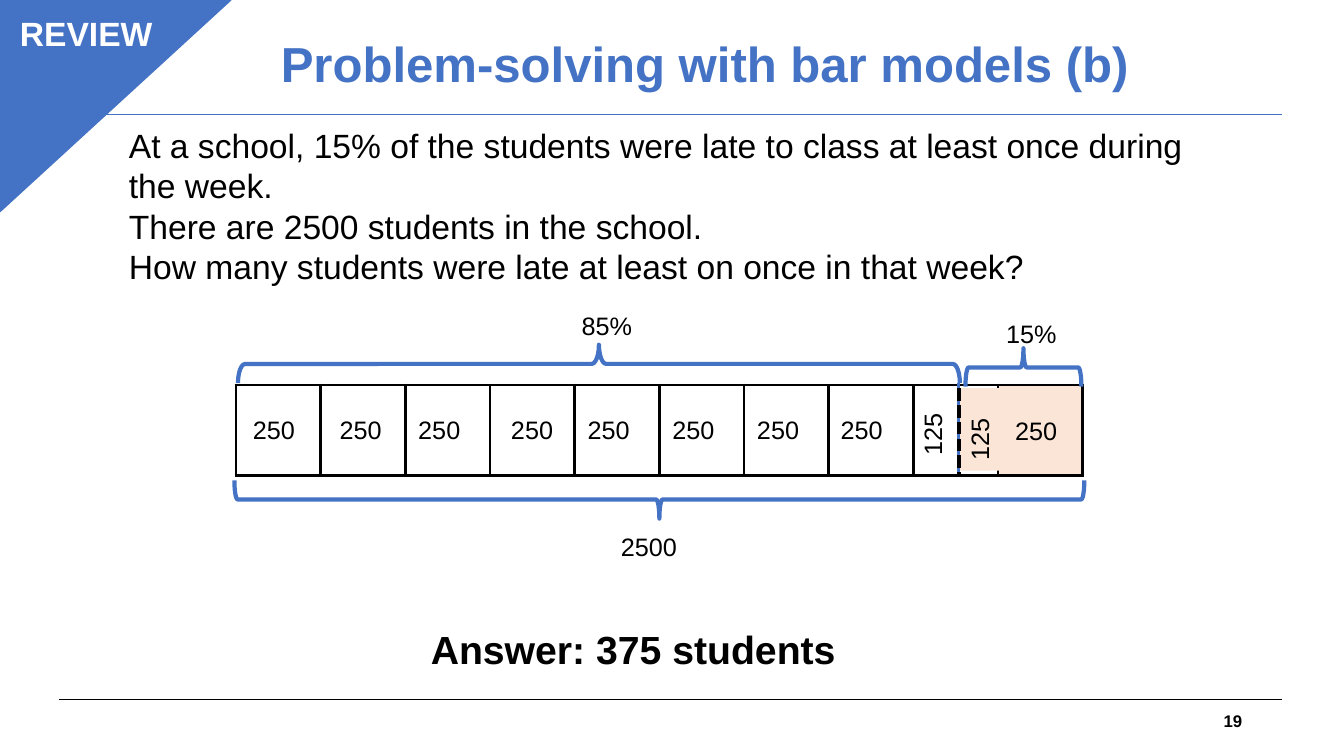
from dataclasses import dataclass
from typing import Optional

from lxml import etree
from pptx import Presentation
from pptx import util as u
from pptx.dml.color import RGBColor
from pptx.enum import dml, shapes, text
from pptx.oxml import parse_xml
from pptx.oxml.ns import nsdecls, qn

PX = 9144  # 100 px to the inch

BLUE = RGBColor(0x44, 0x72, 0xC4)
PEACH = RGBColor(0xFB, 0xE5, 0xD6)
BLACK = RGBColor(0, 0, 0)
WHITE = RGBColor(255, 255, 255)

LEFT, CENTER, RIGHT = text.PP_ALIGN.LEFT, text.PP_ALIGN.CENTER, text.PP_ALIGN.RIGHT
TOP, MIDDLE = text.MSO_ANCHOR.TOP, text.MSO_ANCHOR.MIDDLE


@dataclass
class Label:
    lines: list[str]
    x: int
    y: int
    w: int = 93
    h: int = 40
    size: float = 18
    color: RGBColor = BLACK
    bold: bool = False
    align: int = LEFT
    anchor: int = TOP
    fill: Optional[RGBColor] = None
    rotation: int = 0
    grow: bool = True
    spacing: Optional[float] = None


@dataclass
class Brace:
    x: int
    y: int
    w: int
    h: int
    rotation: int
    curl: float = 0.0833


@dataclass
class Rule:
    x1: int
    y1: int
    x2: int
    y2: int
    color: RGBColor
    width: float = 0.75
    dash: Optional[int] = None


def px(*lengths: int) -> list[int]:
    return [u.Emu(n * PX) for n in lengths]


def add_label(s, label: Label) -> None:
    sp = s.shapes.add_textbox(*px(label.x, label.y, label.w, label.h))
    sp.rotation = label.rotation
    if label.fill is not None:
        sp.fill.solid()
        sp.fill.fore_color.rgb = label.fill
    tf = sp.text_frame
    fit = text.MSO_AUTO_SIZE.SHAPE_TO_FIT_TEXT if label.grow else text.MSO_AUTO_SIZE.NONE
    frame_format = {"word_wrap": True, "auto_size": fit, "vertical_anchor": label.anchor}
    for name, value in frame_format.items():
        setattr(tf, name, value)
    for i, line in enumerate(label.lines):
        p = tf.add_paragraph() if i else tf.paragraphs[0]
        p.alignment = label.align
        p.line_spacing = label.spacing
        r = p.add_run()
        r.text = line
        font_format = {"name": "Arial", "size": u.Pt(label.size), "bold": label.bold}
        for name, value in font_format.items():
            setattr(r.font, name, value)
        r.font.color.rgb = label.color


def add_brace(s, brace: Brace) -> None:
    sp = s.shapes.add_shape(shapes.MSO_SHAPE.LEFT_BRACE,
                            *px(brace.x, brace.y, brace.w, brace.h))
    sp.shadow.inherit = False
    sp.rotation = brace.rotation
    sp.adjustments[0] = brace.curl
    sp.fill.background()
    sp.line.color.rgb = BLUE
    sp.line.width = u.Pt(3)


def add_rule(s, rule: Rule) -> None:
    line = s.shapes.add_connector(shapes.MSO_CONNECTOR.STRAIGHT,
                                  *px(rule.x1, rule.y1, rule.x2, rule.y2))
    line.line.color.rgb = rule.color
    line.line.width = u.Pt(rule.width)
    if rule.dash is not None:
        line.line.dash_style = rule.dash
    etree.SubElement(line._element.spPr, qn("a:effectLst"))


def add_bar(s, x: int, y: int, cell_w: int, h: int, count: int) -> None:
    table = s.shapes.add_table(1, count, *px(x, y, cell_w * count, h)).table
    table.first_row = table.horz_banding = False
    table.rows[0].height = u.Emu(h * PX)
    for i, cell in enumerate(table.rows[0].cells):
        table.columns[i].width = u.Emu(cell_w * PX)
        if i == count - 1:
            cell.fill.solid()
            cell.fill.fore_color.rgb = PEACH
        else:
            cell.fill.background()
        tc_pr = cell._tc.get_or_add_tcPr()
        for k, side in enumerate("LRTB"):
            tc_pr.insert(k, parse_xml(
                f'<a:ln{side} {nsdecls("a")} w="{u.Pt(2.25)}"><a:solidFill>'
                f'<a:srgbClr val="{BLACK}"/></a:solidFill></a:ln{side}>'))


def add_corner(s, w: int, h: int) -> None:
    sp = s.shapes.add_shape(shapes.MSO_SHAPE.ISOSCELES_TRIANGLE, *px(0, 0, w, h))
    sp.shadow.inherit = False
    sp.adjustments[0] = 0
    sp._element.spPr.xfrm.set("flipV", "1")
    sp.fill.solid()
    sp.fill.fore_color.rgb = BLUE
    sp.line.color.rgb = BLUE
    sp.line.width = u.Pt(1)


QUESTION = [
    "At a school, 15% of the students were late to class at least once during the week.",
    "There are 2500 students in the school.",
    "How many students were late at least on once in that week?",
]
FRAME_RULES = [Rule(59, 694, 1272, 694, BLACK), Rule(59, 114, 1272, 114, BLUE)]
SPLIT_RULES = [
    Rule(951, 380, 951, 470, BLUE, 2.25),
    Rule(951, 385, 951, 470, BLACK, 3, dml.MSO_LINE.SQUARE_DOT),
]
WHOLE_PARTS = [Label(["250"], x, 406) for x in (241, 327, 405, 497, 573, 657, 741, 824)]
LABELS = [
    Label(["19"], 1193, 695, 49, 40, 12, bold=True, align=RIGHT, anchor=MIDDLE, grow=False),
    Label(QUESTION, 118, 119, 1108, 172, 24),
    Label(["2500"], 606, 522),
    Label(["85%"], 567, 303),
    Label(["15%"], 988, 311),
    *WHOLE_PARTS,
    Label(["250"], 997, 407, 75, fill=PEACH),
    Label(["125"], 878, 395, rotation=270),
    Label(["125"], 930, 406, 82, fill=PEACH, rotation=270),
    Label(["Answer: 375 students"], 393, 615, 470, 57, 28, bold=True, align=CENTER),
    Label(["Problem-solving with bar models (b)"], 202, 20, 994, 93, 35.1, BLUE, True,
          CENTER, MIDDLE, grow=False, spacing=0.9),
]
BRACES = [
    Brace(635, 74, 38, 843, 270),
    Brace(575, 3, 38, 716, 90, 0.187),
    Brace(996, 307, 38, 115, 90),
]


def main() -> None:
    prs = Presentation()
    prs.slide_width, prs.slide_height = px(1333, 750)
    s = prs.slides.add_slide(prs.slide_layouts[6])

    # Frame lines and the bar of ten parts
    for rule in FRAME_RULES:
        add_rule(s, rule)
    add_bar(s, 234, 382, 84, 90, 10)

    # Wording and part values
    for label in LABELS:
        add_label(s, label)

    # Corner flag
    add_corner(s, 229, 210)
    add_label(s, Label(["REVIEW"], -6, 8, 183, 50, 24, WHITE, True, CENTER))

    # Braces and the split between late and on time
    for brace in BRACES:
        add_brace(s, brace)
    for rule in SPLIT_RULES:
        add_rule(s, rule)

    prs.save("out.pptx")


if __name__ == "__main__":
    main()
